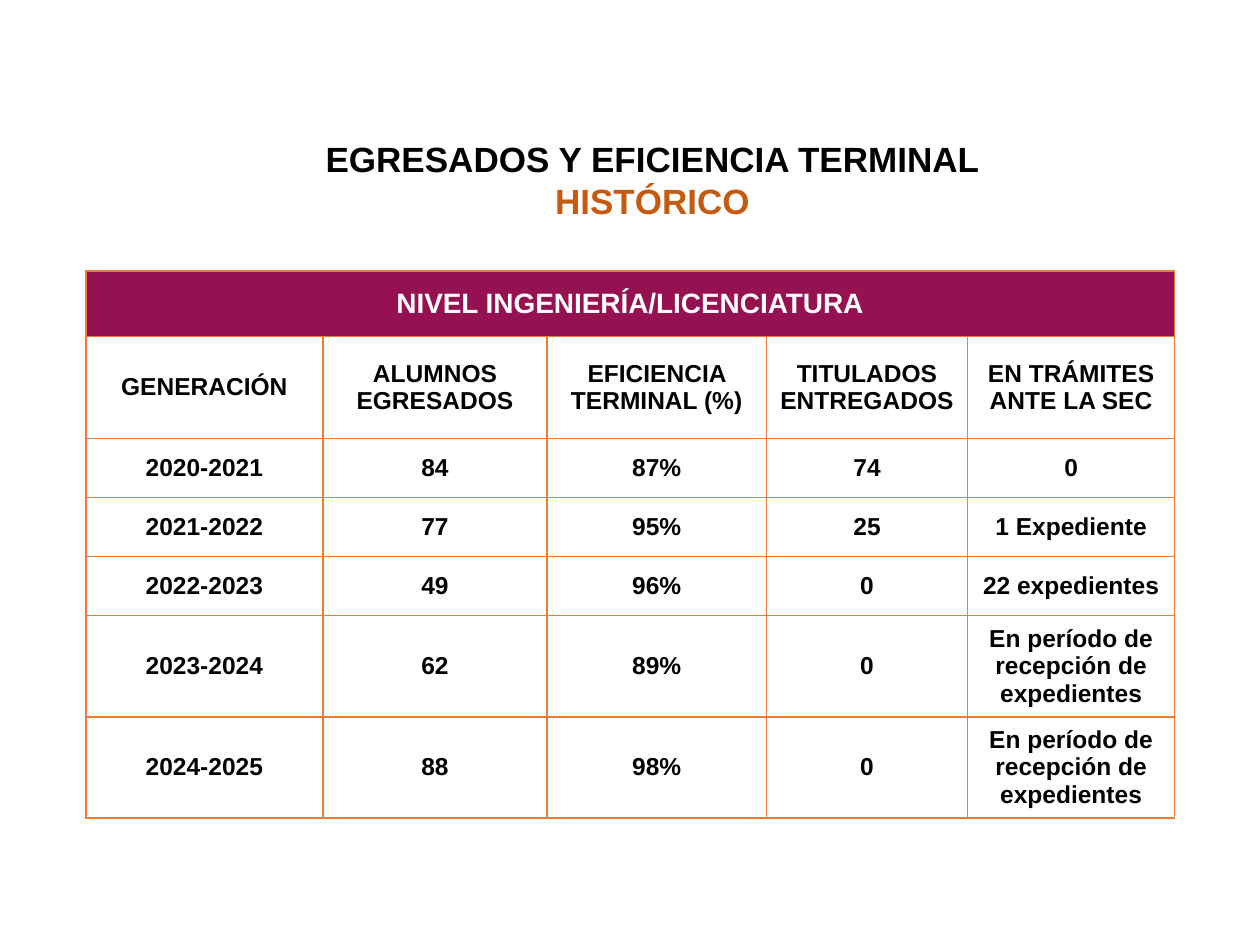
"""Build a slide with graduates and completion rates by generation."""
from lxml import etree
from pptx import Presentation
from pptx.dml.color import RGBColor
from pptx.enum.text import MSO_ANCHOR, PP_ALIGN
from pptx.oxml.ns import qn
from pptx.util import Cm, Pt

CENTER = PP_ALIGN.CENTER
MIDDLE = MSO_ANCHOR.MIDDLE

BLACK, WHITE = "000000", "FFFFFF"
ORANGE, RUST, PURPLE = "ED7D31", "C55A11", "961151"

TITLE_LINES = [("EGRESADOS Y EFICIENCIA TERMINAL", BLACK), ("HISTÓRICO", RUST)]
TITLE_BOX = (4.95, 2.64, 16.41, 1.96)

BANNER = "NIVEL INGENIERÍA/LICENCIATURA"
HEADERS = [
    "GENERACIÓN",
    "ALUMNOS EGRESADOS",
    "EFICIENCIA TERMINAL (%)",
    "TITULADOS\nENTREGADOS",
    "EN TRÁMITES ANTE LA SEC",
]
PENDING = "En período de recepción de expedientes"
GENERATIONS = [
    ("2020-2021", "84", "87%", "74", "0"),
    ("2021-2022", "77", "95%", "25", "1 Expediente"),
    ("2022-2023", "49", "96%", "0", "22 expedientes"),
    ("2023-2024", "62", "89%", "0", PENDING),
    ("2024-2025", "88", "98%", "0", PENDING),
]
TABLE_ORIGIN = (1.73, 5.46)
COLUMN_WIDTHS = [4.78, 4.52, 4.42, 4.06, 4.17]
ROW_HEIGHTS = [1.32, 2.06, 1.19, 1.19, 1.19, 2.04, 2.04]
BORDER_SIDES = ("a:lnL", "a:lnR", "a:lnT", "a:lnB")


def color(value):
    return RGBColor.from_string(value)


def write_lines(text_frame, lines, size):
    for index, (text, line_color) in enumerate(lines):
        paragraph = text_frame.add_paragraph() if index else text_frame.paragraphs[0]
        paragraph.alignment = CENTER
        run = paragraph.add_run()
        run.text = text
        font_format = {"name": "Arial", "size": Pt(size), "bold": True}
        for name, value in font_format.items():
            setattr(run.font, name, value)
        run.font.color.rgb = color(line_color)


def add_borders(cell):
    properties = cell._tc.get_or_add_tcPr()
    for side in BORDER_SIDES:
        line = etree.SubElement(properties, qn(side), w=str(Pt(1)))
        fill = etree.SubElement(line, qn("a:solidFill"))
        etree.SubElement(fill, qn("a:srgbClr"), val=ORANGE)


def format_cell(cell, fill_color):
    add_borders(cell)
    cell.vertical_anchor = MIDDLE
    cell.fill.solid()
    cell.fill.fore_color.rgb = color(fill_color)


def add_title(slide):
    text_frame = slide.shapes.add_textbox(*map(Cm, TITLE_BOX)).text_frame
    text_frame.word_wrap = True
    write_lines(text_frame, TITLE_LINES, 20)


def add_generation_table(slide):
    size = (sum(COLUMN_WIDTHS), sum(ROW_HEIGHTS))
    table = slide.shapes.add_table(
        len(ROW_HEIGHTS), len(COLUMN_WIDTHS), *map(Cm, TABLE_ORIGIN + size)
    ).table
    for column, width in zip(table.columns, COLUMN_WIDTHS):
        column.width = Cm(width)
    for row, height in zip(table.rows, ROW_HEIGHTS):
        row.height = Cm(height)

    for cell in table.rows[0].cells:
        format_cell(cell, PURPLE)
    banner = table.cell(0, 0)
    banner.merge(table.cell(0, len(COLUMN_WIDTHS) - 1))
    write_lines(banner.text_frame, [(BANNER, WHITE)], 16)

    for row_index, texts in enumerate([HEADERS, *GENERATIONS], start=1):
        for column_index, text in enumerate(texts):
            cell = table.cell(row_index, column_index)
            format_cell(cell, WHITE)
            lines = [(line, BLACK) for line in text.split("\n")]
            write_lines(cell.text_frame, lines, 14)


def main():
    presentation = Presentation()
    presentation.slide_width = Cm(25.4)
    presentation.slide_height = Cm(19.05)
    slide = presentation.slides.add_slide(presentation.slide_layouts[6])
    add_generation_table(slide)
    add_title(slide)
    presentation.save("out.pptx")


if __name__ == "__main__":
    main()
